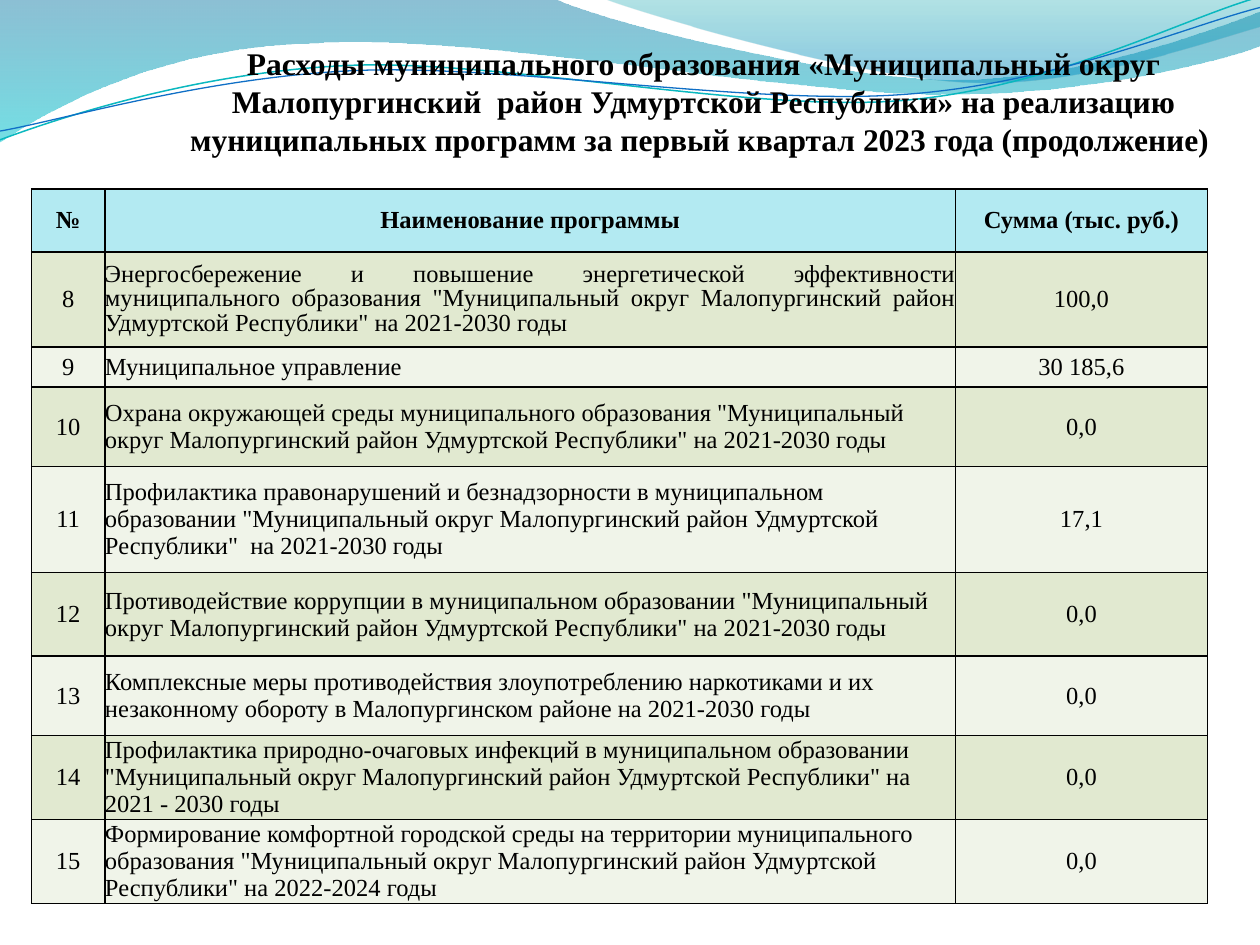
"""Build the slide on municipal programme spending with its wave header and table."""
import math

import pptx
import pptx.dml.color
import pptx.enum.text
import pptx.oxml
import pptx.oxml.ns
import pptx.util
from lxml import etree

Pt = pptx.util.Pt
qn = pptx.oxml.ns.qn
ALIGN = pptx.enum.text.PP_ALIGN
ANCHOR = pptx.enum.text.MSO_ANCHOR

TITLE = ("Расходы муниципального образования «Муниципальный округ Малопургинский  район "
         "Удмуртской Республики» на реализацию муниципальных программ за первый квартал "
         "2023 года (продолжение) ")
HEADER = ("№", "Наименование программы", "Сумма (тыс. руб.)")
PROGRAMMES = [
    ("8", 'Энергосбережение и повышение энергетической эффективности муниципального образования '
          '"Муниципальный округ Малопургинский район Удмуртской Республики" на 2021-2030 годы', "100,0"),
    ("9", "Муниципальное управление", "30 185,6"),
    ("10", 'Охрана окружающей среды муниципального образования "Муниципальный округ '
           'Малопургинский район Удмуртской Республики" на 2021-2030 годы', "0,0"),
    ("11", 'Профилактика правонарушений и безнадзорности в муниципальном образовании "Муниципальный '
           'округ Малопургинский район Удмуртской Республики"  на 2021-2030 годы', "17,1"),
    ("12", 'Противодействие коррупции в муниципальном образовании "Муниципальный округ '
           'Малопургинский район Удмуртской Республики" на 2021-2030 годы', "0,0"),
    ("13", "Комплексные меры противодействия злоупотреблению наркотиками и их незаконному обороту "
           "в Малопургинском районе на 2021-2030 годы", "0,0"),
    ("14", 'Профилактика природно-очаговых инфекций в муниципальном образовании "Муниципальный '
           'округ Малопургинский район Удмуртской Республики" на 2021 - 2030 годы', "0,0"),
    ("15", 'Формирование комфортной городской среды на территории муниципального образования '
           '"Муниципальный округ Малопургинский район Удмуртской Республики" на 2022-2024 годы', "0,0"),
]
COLUMN_WIDTHS = (42, 486, 144)
ROW_HEIGHTS = (36, 54.2, 23, 45.36, 60.48, 48, 45.36, 48, 48)

LEFT_WAVE = [
    (0, 0), (316.8, -0.7),
    (342.7, 12.2, 478.1, 45.4, 545.8, 45.4), (614.2, 45.4, 689.8, 18.7, 720, 6.5),
    (720.7, 25.9),
    (707.8, 31.7, 626.4, 54.7, 537.1, 54), (447.8, 54, 275, 20.2, 185, 24.5),
    (92.9, 25.9, 33.1, 59.8, -0.7, 81.4),
]
RIGHT_WAVE = [
    (344.9, -0.7),
    (366.5, 7.9, 491, 44.6, 553.7, 46.8), (616.3, 49.7, 691.9, 23, 720, 15.1),
    (720, 0),
]
TEAL_CURVE = [
    (0, 79.9),
    (34.6, 67, 113.8, 41, 199.4, 37.4), (284.4, 33.8, 427, 64.1, 513.4, 57.6),
    (599.8, 51.1, 675.4, 10.8, 718.6, -1.4),
]
BLUE_CURVE = [
    (0, 74.9),
    (33.8, 69.1, 118.1, 43.9, 203.8, 40.3), (290.2, 36.7, 429.8, 60.5, 516.2, 54),
    (601.9, 48.2, 677.5, 15.1, 720, 4.3),
]
CURVE_TILT = -2.7


def color(value):
    return pptx.dml.color.RGBColor.from_string(value)


def turn(step, center, degrees):
    """Turn every point of a step clockwise about a center."""
    cos, sin = math.cos(math.radians(degrees)), math.sin(math.radians(degrees))
    turned = []
    for x, y in zip(step[::2], step[1::2]):
        dx, dy = x - center[0], y - center[1]
        turned += [center[0] + dx * cos - dy * sin, center[1] + dx * sin + dy * cos]
    return tuple(turned)


class SlideBuilder:
    """Hold the text style and the slide being built."""
    font = "Times New Roman"
    ink = "000000"

    def __init__(self, page):
        self.page = page

    def style(self, para, size, bold=False, align=None):
        para.alignment = align
        para.font.name = self.font
        para.font.size = Pt(size)
        para.font.bold = bold
        para.font.color.rgb = color(self.ink)

    def outline(self, steps, close):
        points = [(Pt(x), Pt(y)) for step in steps for x, y in zip(step[::2], step[1::2])]
        builder = self.page.shapes.build_freeform(*points[0])
        builder.add_line_segments(points[1:], close=close)
        shape = builder.convert_to_shape()
        shape.shadow.inherit = False
        segments = iter(list(shape.element.iter(qn("a:lnTo"))))
        for step in steps[1:]:
            segment = next(segments)
            if len(step) == 6:
                bezier = etree.Element(qn("a:cubicBezTo"))
                segment.addprevious(bezier)
                for part in (segment, next(segments), next(segments)):
                    bezier.append(part[0])
                    part.getparent().remove(part)
        return shape

    def wave(self, steps, stops):
        shape = self.outline(steps, close=True)
        shape.line.fill.background()
        shape.fill.gradient()
        shape.fill.gradient_angle = 270
        for stop, (position, value, _) in zip(shape.fill.gradient_stops, stops):
            stop.position = position
            stop.color.rgb = color(value)
        for node, (_, _, opacity) in zip(shape.element.iter(qn("a:srgbClr")), stops):
            etree.SubElement(node, qn("a:alpha"), val=str(opacity * 1000))

    def curve(self, steps, center, value, width):
        level = [turn(step, center, -CURVE_TILT) for step in steps]
        shape = self.outline(level, close=False)
        shape.rotation = CURVE_TILT
        shape.fill.background()
        shape.line.color.rgb = color(value)
        shape.line.width = Pt(width)

    def title(self, text, left, top, width, height):
        box = self.page.shapes.title
        self.page.shapes.element.append(box.element)
        box.left, box.top, box.width, box.height = map(Pt, (left, top, width, height))
        frame = box.text_frame
        frame.text = text
        frame.word_wrap = True
        frame.auto_size = pptx.enum.text.MSO_AUTO_SIZE.NONE
        frame.vertical_anchor = ANCHOR.BOTTOM
        frame.margin_left = frame.margin_right = frame.margin_bottom = 0
        frame.margin_top = Pt(3.6)
        self.style(frame.paragraphs[0], 18, True, ALIGN.CENTER)

    def cell(self, cell, text, fill, bold, align, flush):
        cell.text = text
        cell.vertical_anchor = ANCHOR.MIDDLE
        if flush:
            cell.margin_left = cell.margin_right = cell.margin_top = cell.margin_bottom = 0
        self.style(cell.text_frame.paragraphs[0], 14, bold, align)
        properties = cell._tc.get_or_add_tcPr()
        for side in ("a:lnL", "a:lnR", "a:lnT", "a:lnB"):
            border = etree.SubElement(properties, qn(side), w=str(Pt(1)))
            solid = etree.SubElement(border, qn("a:solidFill"))
            etree.SubElement(solid, qn("a:srgbClr"), val=self.ink)
        cell.fill.solid()
        cell.fill.fore_color.rgb = color(fill)

    def table(self, rows, left, top):
        table = self.page.shapes.add_table(
            len(rows), len(COLUMN_WIDTHS), Pt(left), Pt(top),
            Pt(sum(COLUMN_WIDTHS)), Pt(sum(ROW_HEIGHTS))).table
        for column, width in zip(table.columns, COLUMN_WIDTHS):
            column.width = Pt(width)
        for r, (values, height) in enumerate(zip(rows, ROW_HEIGHTS)):
            table.rows[r].height = Pt(height)
            fill = "B3EAF2" if r == 0 else ("F0F4E9", "E1E9D0")[r % 2]
            for c, text in enumerate(values):
                flush = r > 0 and c == 1
                align = ALIGN.LEFT if flush else ALIGN.CENTER
                self.cell(table.cell(r, c), text, fill, r == 0, align, flush)
        first = table.cell(1, 1).text_frame.paragraphs[0]
        first.alignment = ALIGN.JUSTIFY
        first.line_spacing = 0.9


def main():
    deck = pptx.Presentation()
    deck.slide_width, deck.slide_height = Pt(720), Pt(540)
    slide = SlideBuilder(deck.slides.add_slide(deck.slide_layouts[5]))
    slide.wave(LEFT_WAVE, [(0, "0074A1", 45), (1, "00C6CF", 55)])
    slide.wave(RIGHT_WAVE, [(0, "00A1A9", 30), (0.8, "008BBF", 45)])
    slide.curve(TEAL_CURVE, (359.3, 41.4), "0AB8BF", 0.85)
    slide.curve(BLUE_CURVE, (359.7, 42.5), "0F6FC6", 0.75)
    slide.title(TITLE, 102.24, 13, 599.76, 77)
    slide.table([HEADER] + PROGRAMMES, 18, 108)
    deck.save("out.pptx")


if __name__ == "__main__":
    main()
